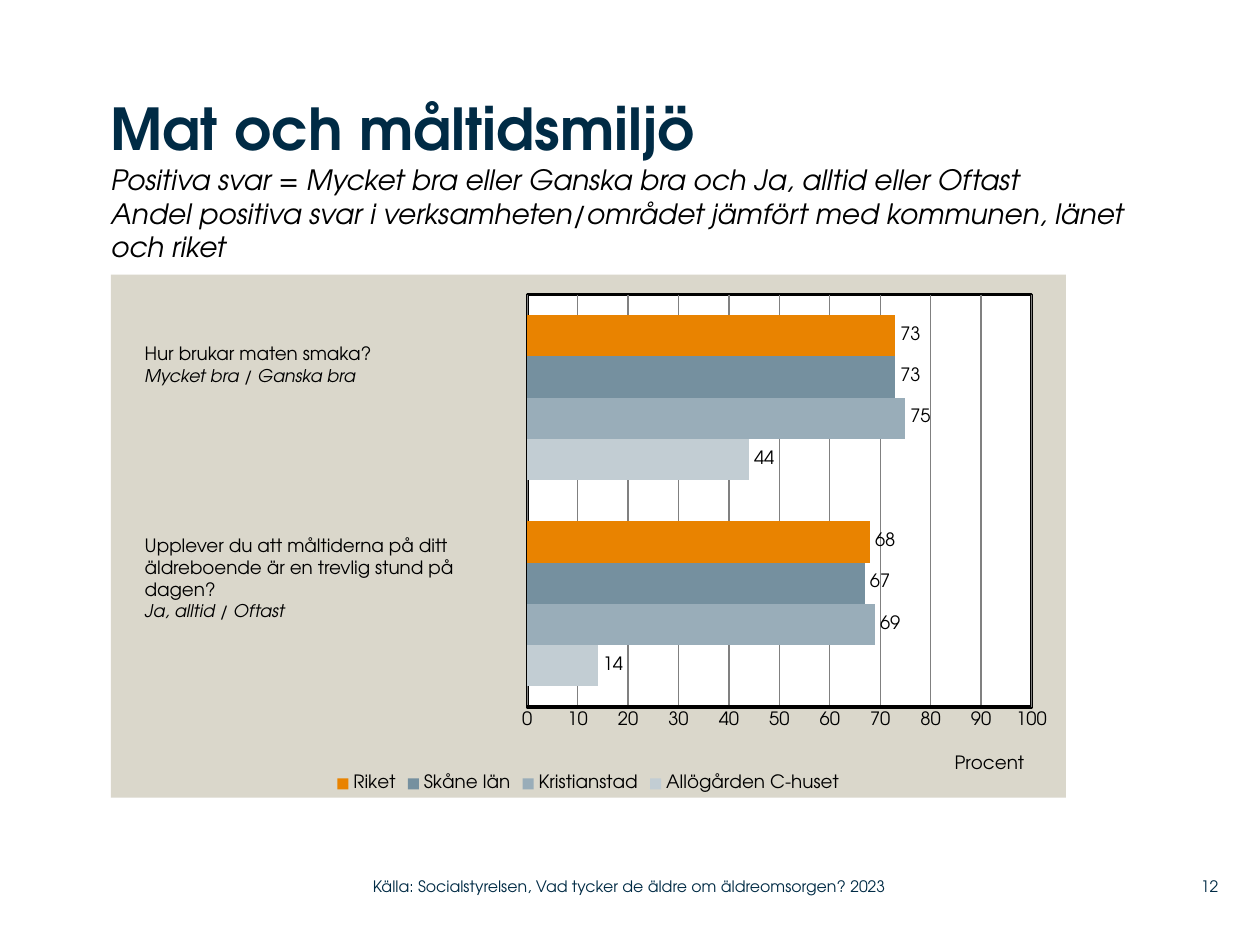
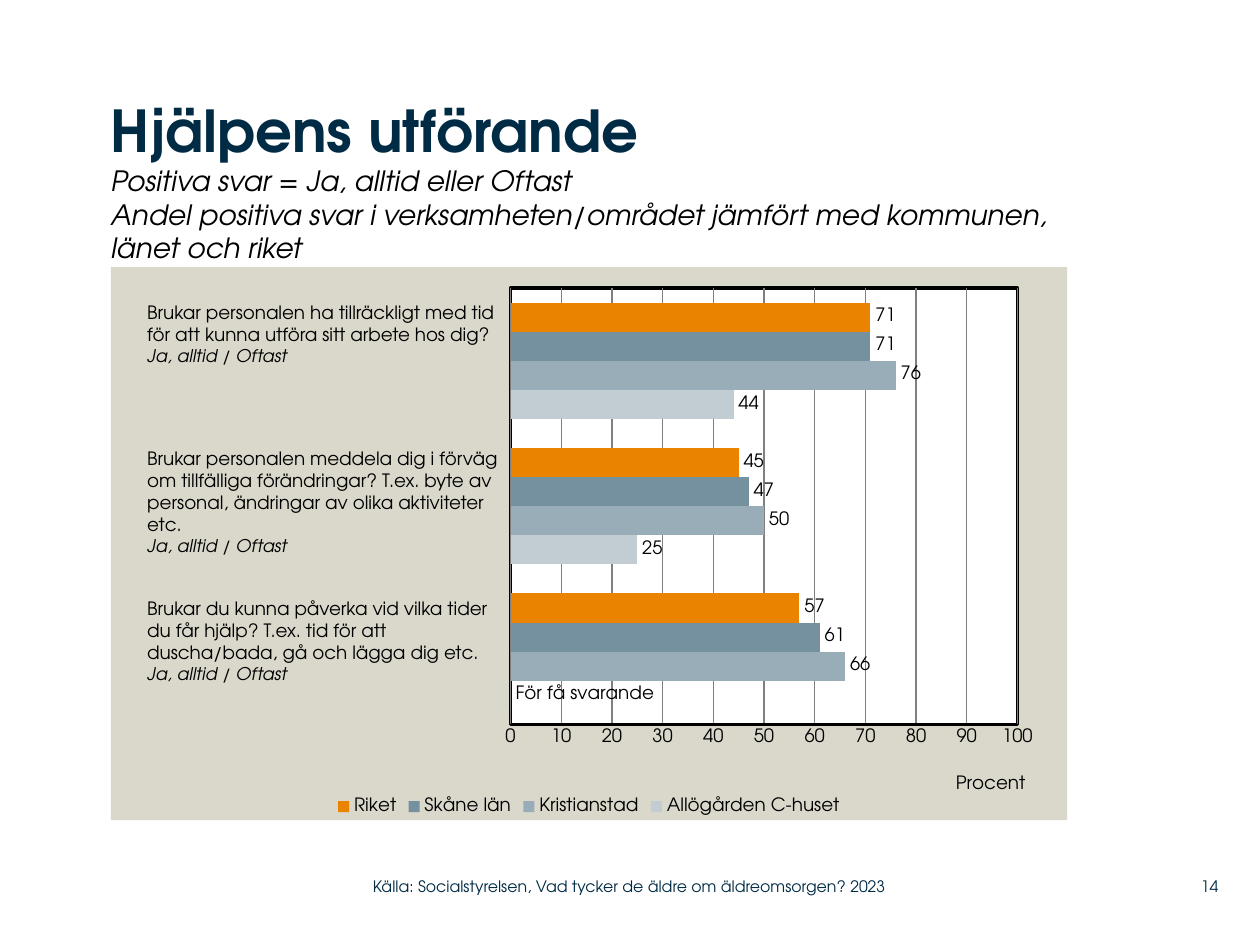
from lxml.etree import SubElement, fromstring
from pptx import Presentation
from pptx.chart.data import CategoryChartData as ChartData
from pptx.dml.color import RGBColor
from pptx.enum.chart import (
    XL_CHART_TYPE as ChartType,
    XL_LABEL_POSITION as LabelPosition,
    XL_LEGEND_POSITION as LegendPosition,
    XL_TICK_MARK as TickMark,
)
from pptx.enum.text import MSO_ANCHOR as Anchor, PP_ALIGN as Align
from pptx.oxml.ns import nsdecls, qn
from pptx.util import Inches, Pt

# Colours
NAVY = RGBColor(0x00, 0x2B, 0x45)
BLACK = RGBColor(0x00, 0x00, 0x00)
WHITE = RGBColor(0xFF, 0xFF, 0xFF)
SAND = RGBColor(0xDA, 0xD7, 0xCB)
GREY = RGBColor(0x80, 0x80, 0x80)
AREA_COLOURS = {
    "Allögården C-huset": RGBColor(0xC2, 0xCD, 0xD3),
    "Kristianstad": RGBColor(0x99, 0xAD, 0xB9),
    "Skåne län": RGBColor(0x75, 0x90, 0x9F),
    "Riket": RGBColor(0xE9, 0x83, 0x00),
}

# Text styles
FONT = "TeX Gyre Adventor"
TITLE = {"size": Pt(33), "bold": True, "italic": False, "color": NAVY}
SUBTITLE = {"size": Pt(16), "bold": False, "italic": True, "color": BLACK}
QUESTION = {"size": Pt(10.5), "bold": False, "italic": False, "color": BLACK}
ANSWER = {**QUESTION, "size": Pt(10), "italic": True}
FOOTER = {**QUESTION, "size": Pt(9), "color": NAVY}

# Shared wording
COMPARISON = ("Andel positiva svar i verksamheten/området jämfört med "
              "kommunen, länet och riket")
SOURCE = "Källa: Socialstyrelsen, Vad tycker de äldre om äldreomsorgen? 2023"
OFTEN = "Ja, alltid / Oftast"
TOO_FEW = "För få svarande"

# Grid of the slide: lengths are given as columns and rows
COLUMNS, ROWS = 100, 75

# Values run from the bottom category to the top one
PAGES = [
    {
        "number": 12,
        "title": "Mat och måltidsmiljö",
        "positive": "Positiva svar = Mycket bra eller Ganska bra och "
                    "Ja, alltid eller Oftast",
        "title_at": (8.8, 7.4, 84.2, 14.4),
        "chart_at": (8.8, 21.8, 75.8, 41.5),
        "plot": (0.436, 0.038, 0.528, 0.789),
        "values": [(14, 44), (69, 75), (67, 73), (68, 73)],
        "questions": [
            ((10.5, 26.7, 27.7, 6.3),
             ["Hur brukar maten smaka?"], "Mycket bra / Ganska bra"),
            ((10.5, 41.9, 27.7, 9.8),
             ["Upplever du att måltiderna på ditt äldreboende är en trevlig "
              "stund på", "dagen?"], OFTEN),
        ],
    },
    {
        "number": 14,
        "title": "Hjälpens utförande",
        "positive": "Positiva svar = Ja, alltid eller Oftast",
        "title_at": (8.8, 7.5, 77.9, 12.1),
        "chart_at": (8.8, 21.2, 75.9, 43.9),
        "plot": (0.418, 0.038, 0.53, 0.789),
        "values": [(0, 25, 44), (66, 50, 76), (61, 47, 71), (57, 45, 71)],
        "questions": [
            ((10.7, 23.4, 29.7, 8.1),
             ["Brukar personalen ha tillräckligt med tid",
              "för att kunna utföra sitt arbete hos dig?"], OFTEN),
            ((10.7, 35, 29.9, 9.8),
             ["Brukar personalen meddela dig i förväg om tillfälliga "
              "förändringar? T.ex. byte av personal, ändringar av olika "
              "aktiviteter etc."], OFTEN),
            ((10.7, 46.9, 29.7, 8.1),
             ["Brukar du kunna påverka vid vilka tider",
              "du får hjälp? T.ex. tid för att",
              "duscha/bada, gå och lägga dig etc."], OFTEN),
        ],
    },
]


def format_font(font, style):
    font.name = FONT
    for key, value in style.items():
        if key == "color":
            font.color.rgb = value
        else:
            setattr(font, key, value)


def area_format(fill, line=""):
    """Fill and outline of a chart area as XML."""
    outline = (f'<a:ln w="{Pt(2)}"><a:solidFill><a:srgbClr val="{line}"/>'
               "</a:solidFill></a:ln>" if line
               else "<a:ln><a:noFill/></a:ln>")
    return fromstring(
        f'<c:spPr {nsdecls("c", "a")}><a:solidFill><a:srgbClr val="{fill}"/>'
        f"</a:solidFill>{outline}</c:spPr>")


def set_layout(element, **shares):
    """Place a chart part by shares of the chart's size."""
    layout = element.find(qn("c:layout"))
    if layout is None:
        layout = SubElement(element, qn("c:layout"))
        element.insert(0, layout)
    manual = SubElement(layout, qn("c:manualLayout"))
    if "w" in shares:
        SubElement(manual, qn("c:layoutTarget")).set("val", "inner")
    for side in "xy":
        SubElement(manual, qn(f"c:{side}Mode")).set("val", "edge")
    for key, share in shares.items():
        SubElement(manual, qn(f"c:{key}")).set("val", str(share))


class SurveyDeck:
    def __init__(self):
        self.deck = Presentation()
        self.deck.slide_width = Inches(10)
        self.deck.slide_height = Inches(7.5)
        self.page = None

    def place(self, at):
        column = self.deck.slide_width / COLUMNS
        row = self.deck.slide_height / ROWS
        return [round(length * unit)
                for length, unit in zip(at, (column, row, column, row))]

    def add_page(self):
        self.page = self.deck.slides.add_slide(self.deck.slide_layouts[6])

    def text(self, at, lines, inset=0, anchor=Anchor.TOP, align=Align.LEFT):
        """Add a text box; lines are pairs of wording and style."""
        frame = self.page.shapes.add_textbox(*self.place(at)).text_frame
        settings = {
            "word_wrap": True, "vertical_anchor": anchor,
            "margin_left": Inches(inset), "margin_right": Inches(inset),
            "margin_top": Inches(inset / 2),
            "margin_bottom": Inches(inset / 2),
        }
        for key, value in settings.items():
            setattr(frame, key, value)
        for index, (wording, style) in enumerate(lines):
            para = frame.add_paragraph() if index else frame.paragraphs[0]
            para.alignment = align
            span = para.add_run()
            span.text = wording
            format_font(span.font, style)

    def title(self, at, title, positive):
        self.text(at, [(title, TITLE), (positive, SUBTITLE),
                       (COMPARISON, SUBTITLE)])

    def question(self, at, wording, answer):
        lines = [(line, QUESTION) for line in wording]
        self.text(at, lines + [(answer, ANSWER)], inset=0.1)

    def footer(self, number):
        self.text((29.6, 68.9, 44.3, 2.9), [(SOURCE, FOOTER)],
                  anchor=Anchor.MIDDLE)
        self.text((92, 68.9, 4.7, 2.9), [(str(number), FOOTER)],
                  anchor=Anchor.MIDDLE, align=Align.RIGHT)

    def chart(self, at, plot_at, values):
        data = ChartData()
        data.categories = [str(n + 1) for n in range(len(values[0]))]
        for name, numbers in zip(AREA_COLOURS, values):
            data.add_series(name, numbers)
        chart = self.page.shapes.add_chart(
            ChartType.BAR_CLUSTERED, *self.place(at), data).chart
        format_font(chart.font, QUESTION)
        chart.has_title = False
        self.format_axes(chart)
        self.format_bars(chart.plots[0])

        # Legend
        chart.has_legend = True
        chart.legend.position = LegendPosition.BOTTOM
        chart.legend.include_in_layout = False
        format_font(chart.legend.font, QUESTION)

        # Backgrounds
        space = chart.element
        space.find(qn("c:chart")).addnext(area_format(SAND))
        plot_area = space.find(".//" + qn("c:plotArea"))
        plot_area.append(area_format(WHITE, BLACK))
        set_layout(plot_area, **dict(zip("xywh", plot_at)))

    def format_axes(self, chart):
        chart.category_axis.visible = False
        axis = chart.value_axis
        settings = {
            "minimum_scale": 0, "maximum_scale": 100, "major_unit": 10,
            "has_major_gridlines": True, "has_title": True,
            "major_tick_mark": TickMark.NONE,
            "minor_tick_mark": TickMark.NONE,
        }
        for key, value in settings.items():
            setattr(axis, key, value)
        format_font(axis.tick_labels.font, QUESTION)
        for part, colour, width in ((axis, BLACK, 2),
                                    (axis.major_gridlines, GREY, 0.75)):
            part.format.line.color.rgb = colour
            part.format.line.width = Pt(width)
        span = axis.axis_title.text_frame.paragraphs[0].add_run()
        span.text = "Procent"
        format_font(span.font, QUESTION)
        set_layout(axis.axis_title.element, x=0.88, y=0.91)

    def format_bars(self, plot):
        plot.gap_width = 100
        plot.overlap = 0
        plot.vary_by_categories = False
        for series in plot.series:
            series.format.fill.solid()
            series.format.fill.fore_color.rgb = AREA_COLOURS[series.name]
            labels = series.data_labels
            labels.show_value = True
            labels.position = LabelPosition.OUTSIDE_END
            format_font(labels.font, QUESTION)
            for index, value in enumerate(series.values):
                if value == 0:
                    label = series.points[index].data_label
                    span = label.text_frame.paragraphs[0].add_run()
                    span.text = TOO_FEW
                    format_font(span.font, QUESTION)
                    label.position = LabelPosition.OUTSIDE_END


def main():
    survey = SurveyDeck()
    for content in PAGES:
        survey.add_page()
        survey.chart(content["chart_at"], content["plot"], content["values"])
        survey.title(content["title_at"], content["title"],
                     content["positive"])
        for question in content["questions"]:
            survey.question(*question)
        survey.footer(content["number"])
    survey.deck.save("out.pptx")


if __name__ == "__main__":
    main()
